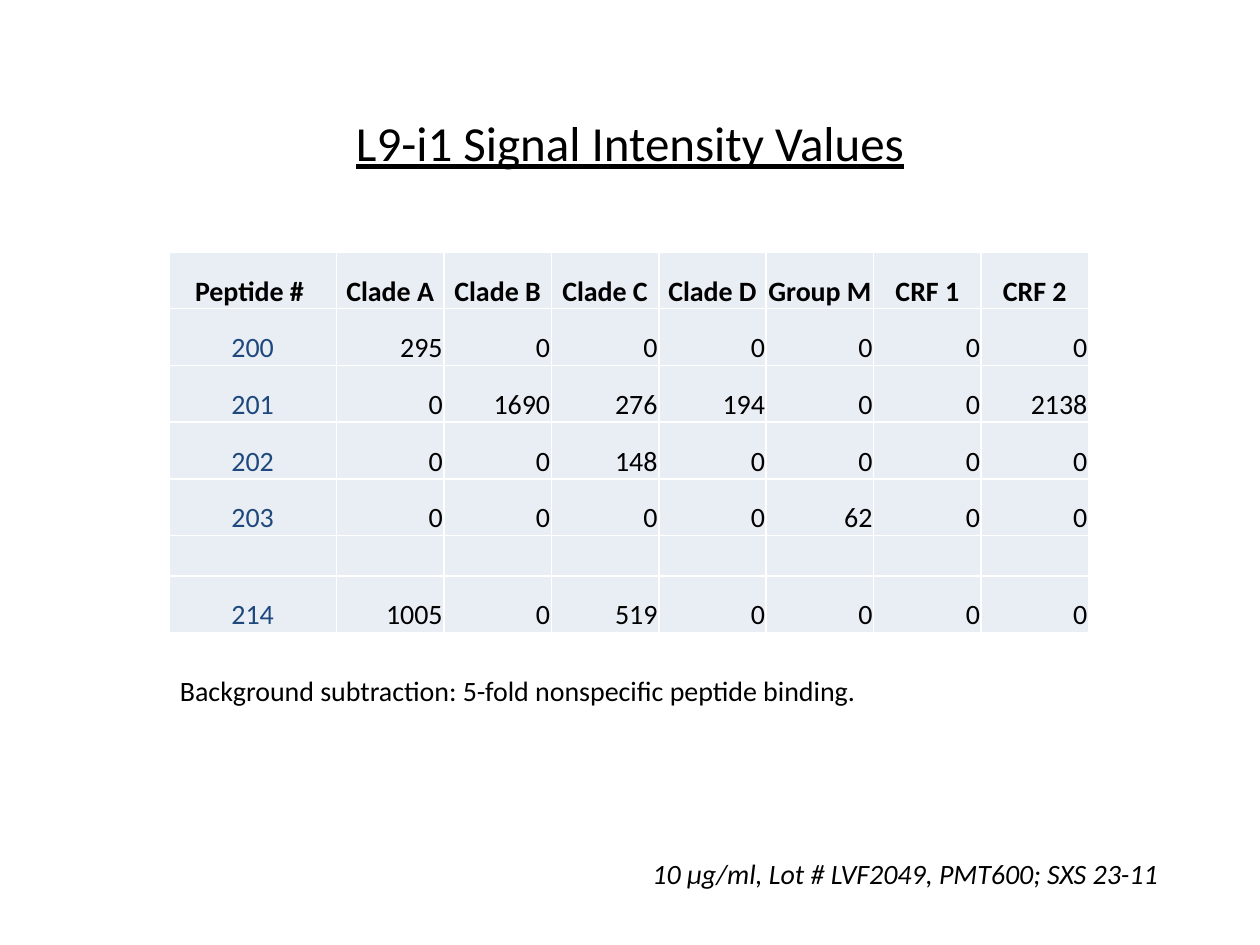
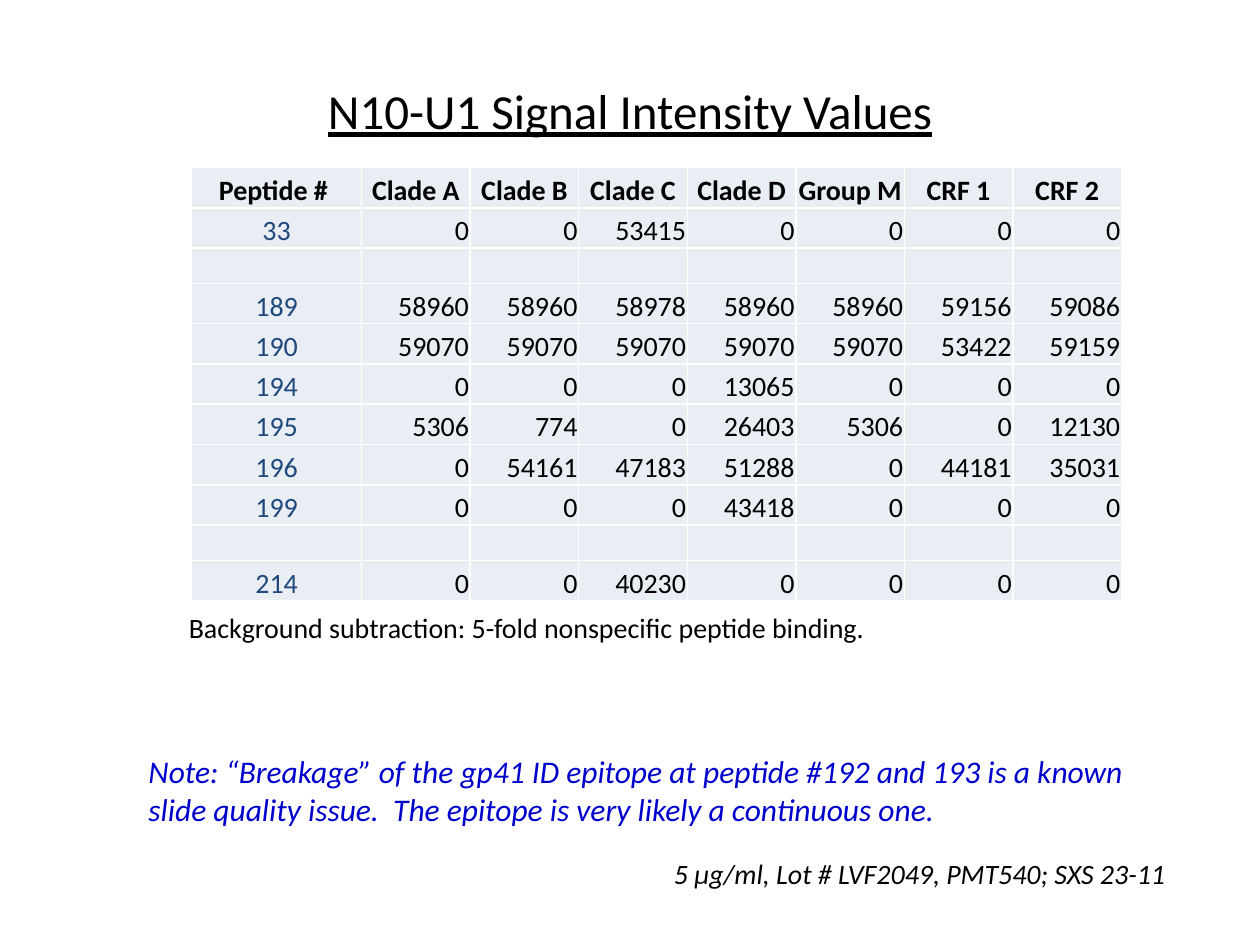
from dataclasses import dataclass

from lxml import etree
from pptx import Presentation
from pptx import util as u
from pptx.dml.color import RGBColor
from pptx.enum import text
from pptx.oxml import ns

PX = u.Inches(1) // 100


@dataclass(frozen=True)
class Theme:
    font: str = "Calibri"
    ink: str = "000000"
    peptide: str = "1F497D"
    note: str = "0000CC"
    cell: str = "E9EDF4"
    border: str = "FFFFFF"
    border_width: int = 1
    title_size: int = 28
    note_size: int = 18
    body_size: int = 16


@dataclass(frozen=True)
class Area:
    left: int
    top: int
    width: int
    height: int

    def emu(self) -> tuple[int, ...]:
        return tuple(side * PX for side in (self.left, self.top, self.width, self.height))


@dataclass(frozen=True)
class Style:
    size: int
    color: str
    bold: bool = False
    italic: bool = False
    underline: bool = False


@dataclass(frozen=True)
class Caption:
    area: Area
    lines: tuple[str, ...]
    style: Style


@dataclass(frozen=True)
class SignalTable:
    area: Area
    peptide_width: int
    row_height: int
    gap_height: int
    rows: tuple[tuple, ...]


@dataclass(frozen=True)
class SignalPage:
    title: Caption
    table: SignalTable
    captions: tuple[Caption, ...]


THEME = Theme()
TITLE = Style(THEME.title_size, THEME.ink, underline=True)
BODY = Style(THEME.body_size, THEME.ink)
HEADER = Style(THEME.body_size, THEME.ink, bold=True)
PEPTIDE = Style(THEME.body_size, THEME.peptide)
LOT = Style(THEME.body_size, THEME.ink, italic=True)
NOTE = Style(THEME.note_size, THEME.note, italic=True)

COLUMNS = ("Peptide # ", "Clade A", "Clade B", "Clade C", "Clade D", "Group M", "CRF 1", "CRF 2")
GAP = ()
BACKGROUND = ("Background subtraction: 5-fold nonspecific peptide binding.",)

PAGES = (
    SignalPage(
        Caption(Area(50, 50, 900, 125), ("L9-i1 Signal Intensity Values",), TITLE),
        SignalTable(Area(134, 200, 730, 304), 133, 45, 32, (
            (200, 295, 0, 0, 0, 0, 0, 0),
            (201, 0, 1690, 276, 194, 0, 0, 2138),
            (202, 0, 0, 148, 0, 0, 0, 0),
            (203, 0, 0, 0, 0, 62, 0, 0),
            GAP,
            (214, 1005, 0, 519, 0, 0, 0, 0),
        )),
        (
            Caption(Area(508, 675, 426, 37), ("10 µg/ml, Lot # LVF2049, PMT600; SXS 23-11",), LOT),
            Caption(Area(133, 530, 568, 37), BACKGROUND, BODY),
        ),
    ),
    SignalPage(
        Caption(Area(50, 25, 900, 125), ("N10-U1 Signal Intensity Values",), TITLE),
        SignalTable(Area(152, 133, 738, 343), 135, 32, 28, (
            (33, 0, 0, 53415, 0, 0, 0, 0),
            GAP,
            (189, 58960, 58960, 58978, 58960, 58960, 59156, 59086),
            (190, 59070, 59070, 59070, 59070, 59070, 53422, 59159),
            (194, 0, 0, 0, 13065, 0, 0, 0),
            (195, 5306, 774, 0, 26403, 5306, 0, 12130),
            (196, 0, 54161, 47183, 51288, 0, 44181, 35031),
            (199, 0, 0, 0, 43418, 0, 0, 0),
            GAP,
            (214, 0, 0, 40230, 0, 0, 0, 0),
        )),
        (
            Caption(Area(525, 675, 414, 37), ("5 µg/ml, Lot # LVF2049, PMT540; SXS 23-11",), LOT),
            Caption(Area(108, 592, 809, 71), (
                "Note: “Breakage” of the gp41 ID epitope at peptide #192 and 193 is a known",
                "slide quality issue.  The epitope is very likely a continuous one.",
            ), NOTE),
            Caption(Area(140, 480, 568, 37), BACKGROUND, BODY),
        ),
    ),
)


def add_span(para, words: str, style: Style) -> None:
    span = para.add_run()
    span.text = words
    font = span.font
    font.name = THEME.font
    font.size = u.Pt(style.size)
    font.bold = style.bold
    font.italic = style.italic
    font.underline = style.underline
    font.color.rgb = RGBColor.from_string(style.color)


def add_caption(page, caption: Caption):
    frame = page.shapes.add_textbox(*caption.area.emu()).text_frame
    frame.word_wrap = False
    frame.auto_size = text.MSO_AUTO_SIZE.SHAPE_TO_FIT_TEXT
    for index, line in enumerate(caption.lines):
        para = frame.add_paragraph() if index else frame.paragraphs[0]
        add_span(para, line, caption.style)
    return frame


def add_title(page, title: Caption) -> None:
    frame = add_caption(page, title)
    frame.word_wrap = True
    frame.auto_size = text.MSO_AUTO_SIZE.NONE
    frame.vertical_anchor = text.MSO_ANCHOR.MIDDLE
    frame.paragraphs[0].alignment = text.PP_ALIGN.CENTER


def add_borders(cell) -> None:
    properties = cell._tc.get_or_add_tcPr()
    for index, side in enumerate(("a:lnL", "a:lnR", "a:lnT", "a:lnB")):
        line = etree.Element(ns.qn(side), w=str(u.Pt(THEME.border_width)))
        fill = etree.SubElement(line, ns.qn("a:solidFill"))
        etree.SubElement(fill, ns.qn("a:srgbClr"), val=THEME.border)
        properties.insert(index, line)


def format_cell(cell) -> None:
    cell.margin_left = cell.margin_right = cell.margin_top = PX
    cell.margin_bottom = 0
    cell.vertical_anchor = text.MSO_ANCHOR.BOTTOM
    cell.fill.solid()
    cell.fill.fore_color.rgb = RGBColor.from_string(THEME.cell)
    add_borders(cell)


def fill_cell(cell, value: object, is_header: bool, is_peptide: bool) -> None:
    para = cell.text_frame.paragraphs[0]
    centred = is_header or is_peptide
    para.alignment = text.PP_ALIGN.CENTER if centred else text.PP_ALIGN.RIGHT
    style = HEADER if is_header else PEPTIDE if is_peptide else BODY
    add_span(para, str(value), style)


def add_signal_table(page, signal: SignalTable) -> None:
    rows = (COLUMNS, *signal.rows)
    table = page.shapes.add_table(len(rows), len(COLUMNS), *signal.area.emu()).table
    table.first_row = table.horz_banding = False
    value_width = (signal.area.width - signal.peptide_width) * PX // (len(COLUMNS) - 1)
    for index, column in enumerate(table.columns):
        column.width = value_width if index else signal.peptide_width * PX
    for row_index, values in enumerate(rows):
        row = table.rows[row_index]
        row.height = (signal.row_height if values else signal.gap_height) * PX
        for cell in row.cells:
            format_cell(cell)
            if not values:
                para = cell.text_frame.paragraphs[0]
                etree.SubElement(para._p, ns.qn("a:endParaRPr"), sz=str(THEME.body_size * 100))
        for column_index, value in enumerate(values):
            fill_cell(row.cells[column_index], value, row_index == 0, column_index == 0)


def main() -> None:
    deck = Presentation()
    deck.slide_width, deck.slide_height = 1000 * PX, 750 * PX
    for content in PAGES:
        page = deck.slides.add_slide(deck.slide_layouts[6])
        add_title(page, content.title)
        add_signal_table(page, content.table)
        for caption in content.captions:
            add_caption(page, caption)
    deck.save("out.pptx")


if __name__ == "__main__":
    main()
